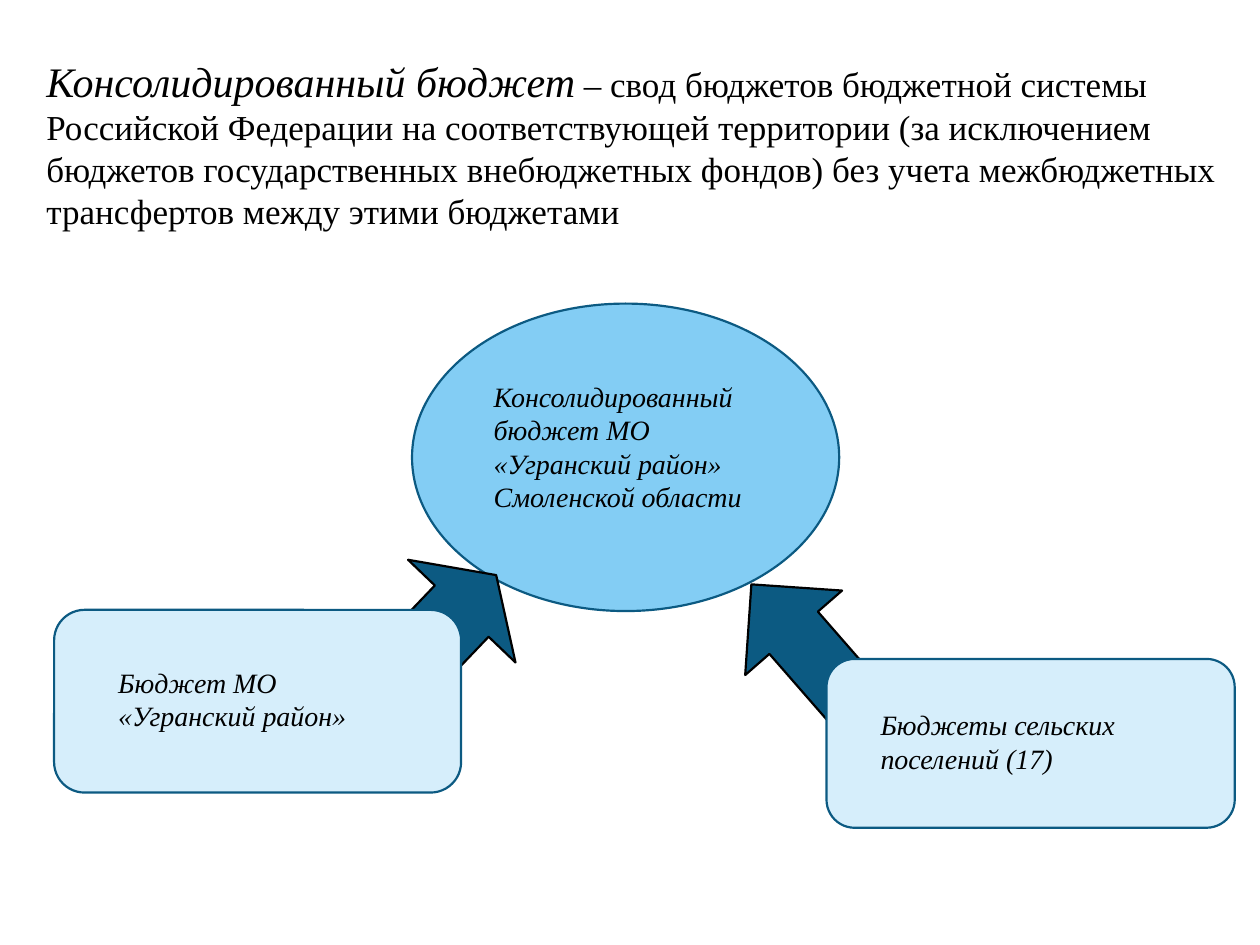
import pptx
import pptx.util
import pptx.dml.color
import pptx.enum.shapes
import pptx.enum.text

Inches = pptx.util.Inches
Pt = pptx.util.Pt
SHAPES = pptx.enum.shapes.MSO_SHAPE
COLORS = {"text": "000000", "sky": "83CDF4", "pale": "D6EEFB", "navy": "0C5A82"}


def rgb(name):
    return pptx.dml.color.RGBColor.from_string(COLORS[name])


def write(paragraph, text, size, italic):
    """Add a run to the paragraph; a trailing newline becomes a line break."""
    run = paragraph.add_run()
    run.text = text.rstrip("\n")
    run.font.color.rgb = rgb("text")
    formats = {"name": "Times New Roman", "size": Pt(size), "italic": italic}
    for attribute, value in formats.items():
        setattr(run.font, attribute, value)
    if text.endswith("\n"):
        paragraph.add_line_break()
        paragraph.font.size = Pt(size)


presentation = pptx.Presentation()
presentation.slide_width = Inches(10)
presentation.slide_height = Inches(7.5)
slide = presentation.slides.add_slide(presentation.slide_layouts[6])

# Definition at the top
definition = slide.shapes.add_textbox(Inches(0.27), Inches(0.52), Inches(9.53), Inches(1.57))
definition.text_frame.word_wrap = True
definition.text_frame.vertical_anchor = pptx.enum.text.MSO_ANCHOR.MIDDLE
for text, size, italic in [
    ("Консолидированный бюджет", 24, True),
    (" ", 20, True),
    ("– свод бюджетов бюджетной системы Российской Федерации на соответствующей "
     "территории (за исключением бюджетов государственных внебюджетных фондов) "
     "без учета межбюджетных трансфертов между этими бюджетами\n", 20, False),
]:
    write(definition.text_frame.paragraphs[0], text, size, italic)

# Budgets flowing into the consolidated one, back to front:
# preset, position and size, rotation, fill, line
for preset, place, rotation, fill, line in [
    (SHAPES.OVAL, (3.27, 2.41, 3.39, 2.44), 0, "sky", "navy"),
    (SHAPES.RIGHT_ARROW, (3.27, 4.26, 0.79, 1.18), 313.7, "navy", "text"),
    (SHAPES.DOWN_ARROW, (5.9, 4.47, 1.02, 1.36), 138.9, "navy", "text"),
    (SHAPES.ROUNDED_RECTANGLE, (0.43, 4.84, 3.23, 1.45), 0, "pale", "navy"),
    (SHAPES.ROUNDED_RECTANGLE, (6.56, 5.23, 3.24, 1.34), 0, "pale", "navy"),
]:
    figure = slide.shapes.add_shape(preset, *map(Inches, place))
    figure.rotation = rotation
    figure.shadow.inherit = False
    figure.fill.solid()
    figure.fill.fore_color.rgb = rgb(fill)
    figure.line.color.rgb = rgb(line)
    figure.line.width = Pt(1.25)

for text, place in [
    ("Консолидированный бюджет МО «Угранский район» Смоленской области",
     (3.82, 2.96, 2.28, 1.18)),
    ("Бюджет МО «Угранский район»", (0.84, 5.23, 2.13, 0.64)),
    ("Бюджеты сельских поселений (17)", (6.89, 5.57, 2.6, 0.64)),
]:
    budget = slide.shapes.add_textbox(*map(Inches, place))
    budget.text_frame.word_wrap = True
    budget.text_frame.auto_size = pptx.enum.text.MSO_AUTO_SIZE.SHAPE_TO_FIT_TEXT
    write(budget.text_frame.paragraphs[0], text, 16, True)

presentation.save("out.pptx")
